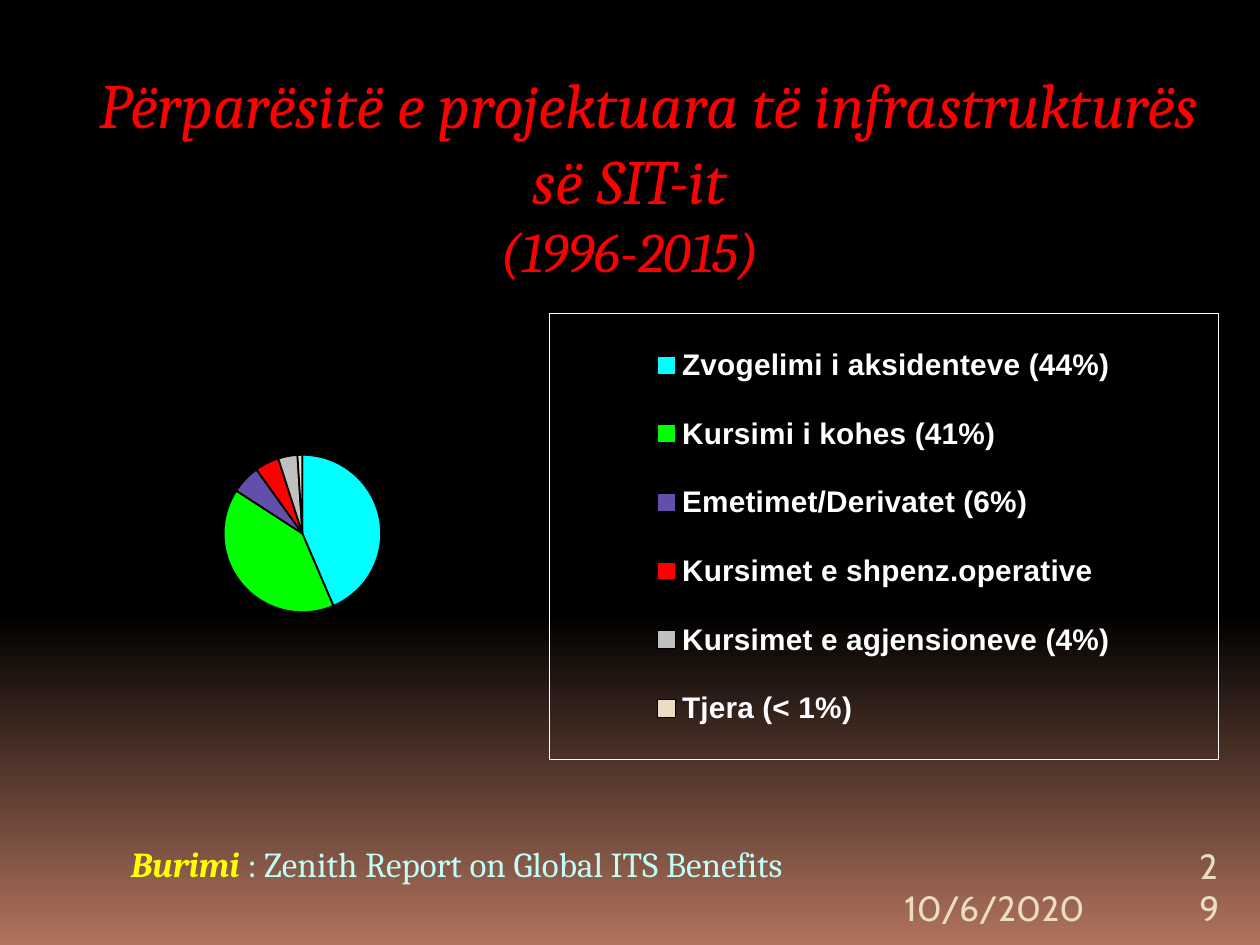
from dataclasses import dataclass

from lxml import etree
from pptx import Presentation
from pptx import util as u
from pptx.chart.data import CategoryChartData
from pptx.dml.color import RGBColor
from pptx.enum import chart as ch
from pptx.enum import text as t
from pptx.oxml import parse_xml
from pptx.oxml.ns import nsdecls, qn


@dataclass(frozen=True)
class Theme:
    black: str = "000000"
    clay: str = "B0735D"
    white: str = "FFFFFF"
    red: str = "FF0000"
    yellow: str = "FFFF00"
    ice: str = "C0FEF9"
    sand: str = "EBDDC3"
    serif: str = "Cambria"
    sans: str = "Arial"
    foot: str = "Cabin"
    large: float = 36
    mid: float = 32
    small: float = 20
    key: float = 17


@dataclass(frozen=True)
class Run:
    text: str
    face: str
    size: float
    color: str
    bold: bool = False
    italic: bool = False


@dataclass(frozen=True)
class Box:
    left: float
    top: float
    width: float
    height: float


@dataclass(frozen=True)
class Label:
    box: Box
    runs: tuple[Run, ...]
    wrap: bool = True
    anchor: t.MSO_ANCHOR = t.MSO_ANCHOR.TOP


@dataclass(frozen=True)
class Slice:
    name: str
    value: int
    color: str


TH = Theme()
HEAD = (
    Run("Përparësitë e projektuara të infrastrukturës së SIT-it",
        TH.serif, TH.large, TH.red, italic=True),
    Run("(1996-2015)", TH.serif, TH.mid, TH.red, italic=True),
)
LABELS = (
    Label(Box(0.94, 6.64, 6.16, 0.44), (
        Run("Burimi", TH.serif, TH.small, TH.yellow, True, True),
        Run(" : Zenith Report on Global ITS Benefits",
            TH.serif, TH.small, TH.ice)), wrap=False),
    Label(Box(7.08, 7.02, 2.33, 0.4),
          (Run("10/6/2020", TH.foot, TH.small, TH.sand),),
          anchor=t.MSO_ANCHOR.BOTTOM),
    Label(Box(9.42, 7.02, 0.5, 0.4),
          (Run("29", TH.foot, TH.small, TH.sand),),
          anchor=t.MSO_ANCHOR.BOTTOM),
)
CHART = Box(0.45, 1.62, 9.23, 4.67)
PLOT = Box(0.63, 3.61, 3.54, 1.25)
LEGEND = Box(4.36, 2.49, 5.31, 3.54)
SLICES = (
    Slice("Zvogelimi i aksidenteve (44%)", 44, "00FFFF"),
    Slice("Kursimi i kohes (41%)", 41, "00FF00"),
    Slice("Emetimet/Derivatet (6%)", 6, "624FAC"),
    Slice("Kursimet e shpenz.operative", 5, "FF0000"),
    Slice("Kursimet e agjensioneve (4%)", 4, "C0C0C0"),
    Slice("Tjera (< 1%)", 1, TH.sand),
)


def place(box: Box) -> tuple[u.Length, ...]:
    return tuple(u.Inches(n)
                 for n in (box.left, box.top, box.width, box.height))


def style(font, run: Run) -> None:
    form = {"name": run.face, "size": u.Pt(run.size),
            "bold": run.bold, "italic": run.italic}
    for key, val in form.items():
        setattr(font, key, val)
    font.color.rgb = RGBColor.from_string(run.color)


def add_run(para, run: Run) -> None:
    part = para.add_run()
    part.text = run.text
    style(part.font, run)


def set_frame(frame, wrap: bool, anchor: t.MSO_ANCHOR) -> None:
    form = {"word_wrap": wrap, "vertical_anchor": anchor,
            "auto_size": t.MSO_AUTO_SIZE.NONE,
            "margin_left": u.Inches(0.1), "margin_right": u.Inches(0.1),
            "margin_top": u.Inches(0.05), "margin_bottom": u.Inches(0.05)}
    for key, val in form.items():
        setattr(frame, key, val)


def paint_back(slide) -> None:
    """Fade from black to clay over the lower third."""
    stops = "".join(
        f'<a:gs pos="{pos * 1000}"><a:srgbClr val="{color}"/></a:gs>'
        for pos, color in ((0, TH.black), (65, TH.black), (100, TH.clay)))
    fill = slide.background.fill
    fill.gradient()
    old = slide.background._cSld.find(".//" + qn("a:gradFill"))
    new = parse_xml(f'<a:gradFill {nsdecls("a")} rotWithShape="1">'
                    f'<a:gsLst>{stops}</a:gsLst>'
                    '<a:lin ang="5400000" scaled="0"/></a:gradFill>')
    old.getparent().replace(old, new)


def add_title(slide) -> None:
    title = slide.shapes.title
    spot = place(Box(0.31, 0.47, 9.38, 1.85))
    for key, val in zip(("left", "top", "width", "height"), spot):
        setattr(title, key, val)
    frame = title.text_frame
    set_frame(frame, True, t.MSO_ANCHOR.TOP)
    for i, run in enumerate(HEAD):
        para = frame.add_paragraph() if i else frame.paragraphs[0]
        para.alignment = t.PP_ALIGN.CENTER
        para.space_before = u.Pt(0)
        para.line_spacing = 1.0
        add_run(para, run)
    first = frame.paragraphs[0]._p.get_or_add_pPr()
    first.set("marL", "0")
    first.set("indent", str(u.Inches(0.3)))


def add_label(slide, label: Label) -> None:
    frame = slide.shapes.add_textbox(*place(label.box)).text_frame
    set_frame(frame, label.wrap, label.anchor)
    for run in label.runs:
        add_run(frame.paragraphs[0], run)


def set_layout(node, box: Box, inner: bool = False) -> None:
    """Fix a chart part at a box given in slide inches."""
    for old in node.findall(qn("c:layout")):
        node.remove(old)
    lay = parse_xml(f'<c:layout {nsdecls("c")}><c:manualLayout/></c:layout>')
    vals = {"layoutTarget": "inner"} if inner else {}
    vals |= {"xMode": "edge", "yMode": "edge",
             "x": (box.left - CHART.left) / CHART.width,
             "y": (box.top - CHART.top) / CHART.height,
             "w": box.width / CHART.width, "h": box.height / CHART.height}
    for key, val in vals.items():
        etree.SubElement(lay[0], qn("c:" + key)).set("val", str(val))
    node.insert(0 if inner else 1, lay)


def add_pie(slide) -> None:
    data = CategoryChartData()
    data.categories = [s.name for s in SLICES]
    data.add_series("Series 1", [s.value for s in SLICES])
    for name in ("Series 2", "Series 3"):
        data.add_series(name, [None] * len(SLICES))
    chart = slide.shapes.add_chart(
        ch.XL_CHART_TYPE.PIE, *place(CHART), data).chart
    chart.replace_data(data)  # a new pie takes only the first series
    chart.has_title = False
    chart.has_legend = True
    font = Run("", TH.sans, TH.key, TH.white, bold=True)
    style(chart.font, font)
    legend = chart.legend
    legend.position = ch.XL_LEGEND_POSITION.RIGHT
    legend.include_in_layout = False
    style(legend.font, font)
    plot = chart.plots[0]
    plot.vary_by_categories = True
    for i, part in enumerate(SLICES):
        form = plot.series[0].points[i].format
        form.fill.solid()
        form.fill.fore_color.rgb = RGBColor.from_string(part.color)
        form.line.color.rgb = RGBColor.from_string(TH.black)
        form.line.width = u.Pt(1.03)
    set_layout(chart._chartSpace.chart.plotArea, PLOT, inner=True)
    key = legend._element
    set_layout(key, LEGEND)
    edge = parse_xml(
        f'<c:spPr {nsdecls("c", "a")}><a:noFill/><a:ln w="{u.Pt(0.25)}">'
        f'<a:solidFill><a:srgbClr val="{TH.white}"/></a:solidFill>'
        '</a:ln></c:spPr>')
    key.find(qn("c:txPr")).addprevious(edge)


def main() -> None:
    deck = Presentation()
    deck.slide_width, deck.slide_height = u.Inches(10), u.Inches(7.5)
    slide = deck.slides.add_slide(deck.slide_layouts[5])
    paint_back(slide)
    add_pie(slide)
    add_title(slide)
    for label in LABELS:
        add_label(slide, label)
    deck.save("out.pptx")


if __name__ == "__main__":
    main()
